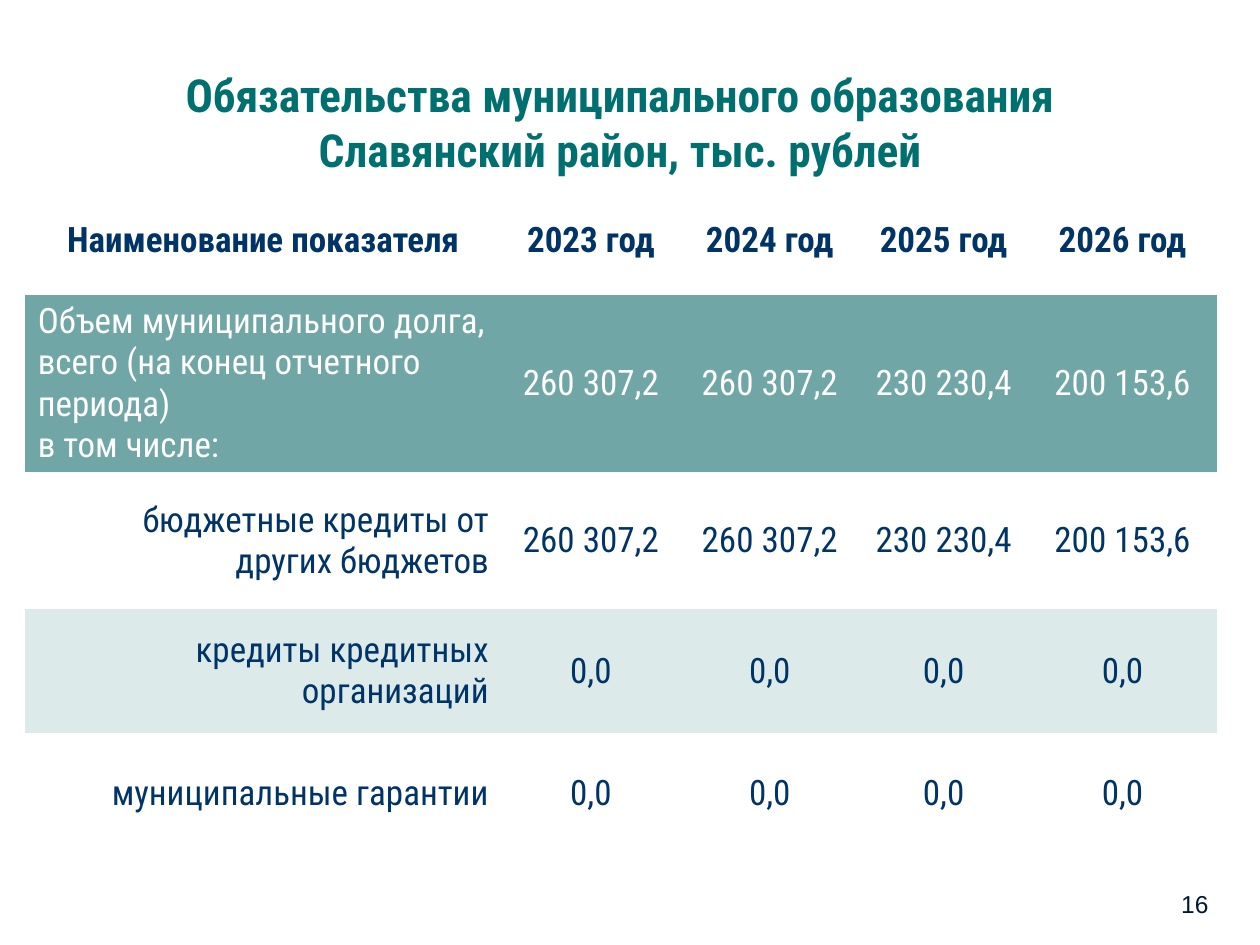
from pptx import Presentation
from pptx.dml.color import RGBColor
from pptx.enum.text import MSO_ANCHOR as Anchor, PP_ALIGN as Align
from pptx.util import Inches, Pt

TEAL = RGBColor(0x00, 0x6F, 0x6F)
NAVY = RGBColor(0x00, 0x33, 0x66)
DARK = RGBColor(0x00, 0x19, 0x33)
SAGE = RGBColor(0x71, 0xA6, 0xA6)
PALE = RGBColor(0xDD, 0xEA, 0xEA)
WHITE = RGBColor(0xFF, 0xFF, 0xFF)
FONT = "Roboto Condensed"


def style(frame, align, size, color, bold=False, name=FONT):
    for para in frame.paragraphs:
        para.alignment = align
        for run in para.runs:
            font = run.font
            font.name, font.size, font.bold = name, Pt(size), bold
            font.color.rgb = color


prs = Presentation()
prs.slide_width, prs.slide_height = Inches(10), Inches(7.5)
slide = prs.slides.add_slide(prs.slide_layouts[5])

# Title
title = slide.shapes.title
title.left, title.top = Inches(0.43), Inches(0.29)
title.width, title.height = Inches(8.99), Inches(1.35)
title.text_frame.text = "Обязательства муниципального образования Славянский район, тыс. рублей"
title.text_frame.vertical_anchor = Anchor.MIDDLE
style(title.text_frame, Align.CENTER, 26, TEAL, True)

# Debt table: label, values, fill, text colour, label alignment
debt = ["260 307,2", "260 307,2", "230 230,4", "200 153,6"]
zeros = ["0,0"] * 4
years = [f"{year} год" for year in range(2023, 2027)]
rows = [
    ("Наименование показателя", years, WHITE, NAVY, Align.CENTER),
    ("Объем муниципального долга, всего (на конец отчетного периода)\nв том числе:",
     debt, SAGE, WHITE, Align.LEFT),
    ("бюджетные кредиты от других бюджетов", debt, WHITE, NAVY, Align.RIGHT),
    ("кредиты кредитных организаций", zeros, PALE, NAVY, Align.RIGHT),
    ("муниципальные гарантии", zeros, WHITE, NAVY, Align.RIGHT),
]
widths = [3.78, 1.42, 1.42, 1.34, 1.5]
heights = [0.87, 1.29, 1.09, 0.98, 0.96]

frame = slide.shapes.add_table(
    len(rows), len(widths), Inches(0.2), Inches(1.47),
    Inches(sum(widths)), Inches(sum(heights)))
# Table style without a grid
frame.element.xpath(".//a:tableStyleId")[0].text = "{2D5ABB26-0587-4C30-8999-92F81FD0307C}"
table = frame.table
table.first_row = table.horz_banding = False
for col, width in zip(table.columns, widths):
    col.width = Inches(width)

for r, (label, values, fill, color, align) in enumerate(rows):
    table.rows[r].height = Inches(heights[r])
    for c, text in enumerate([label] + values):
        cell = table.cell(r, c)
        cell.fill.solid()
        cell.fill.fore_color.rgb = fill
        cell.vertical_anchor = Anchor.MIDDLE
        if r and c:
            cell.margin_left = cell.margin_right = Inches(0.02)
            cell.margin_top = cell.margin_bottom = 0
        cell.text_frame.text = text
        style(cell.text_frame, Align.CENTER if c else align, 20, color, r == 0)

# Page number
page = slide.shapes.add_textbox(Inches(7.36), Inches(6.82), Inches(2.33), Inches(0.52))
page.text_frame.word_wrap = True
page.text_frame.vertical_anchor = Anchor.BOTTOM
page.text_frame.text = "16"
style(page.text_frame, Align.RIGHT, 14, DARK, name="Arial")

prs.save("out.pptx")
